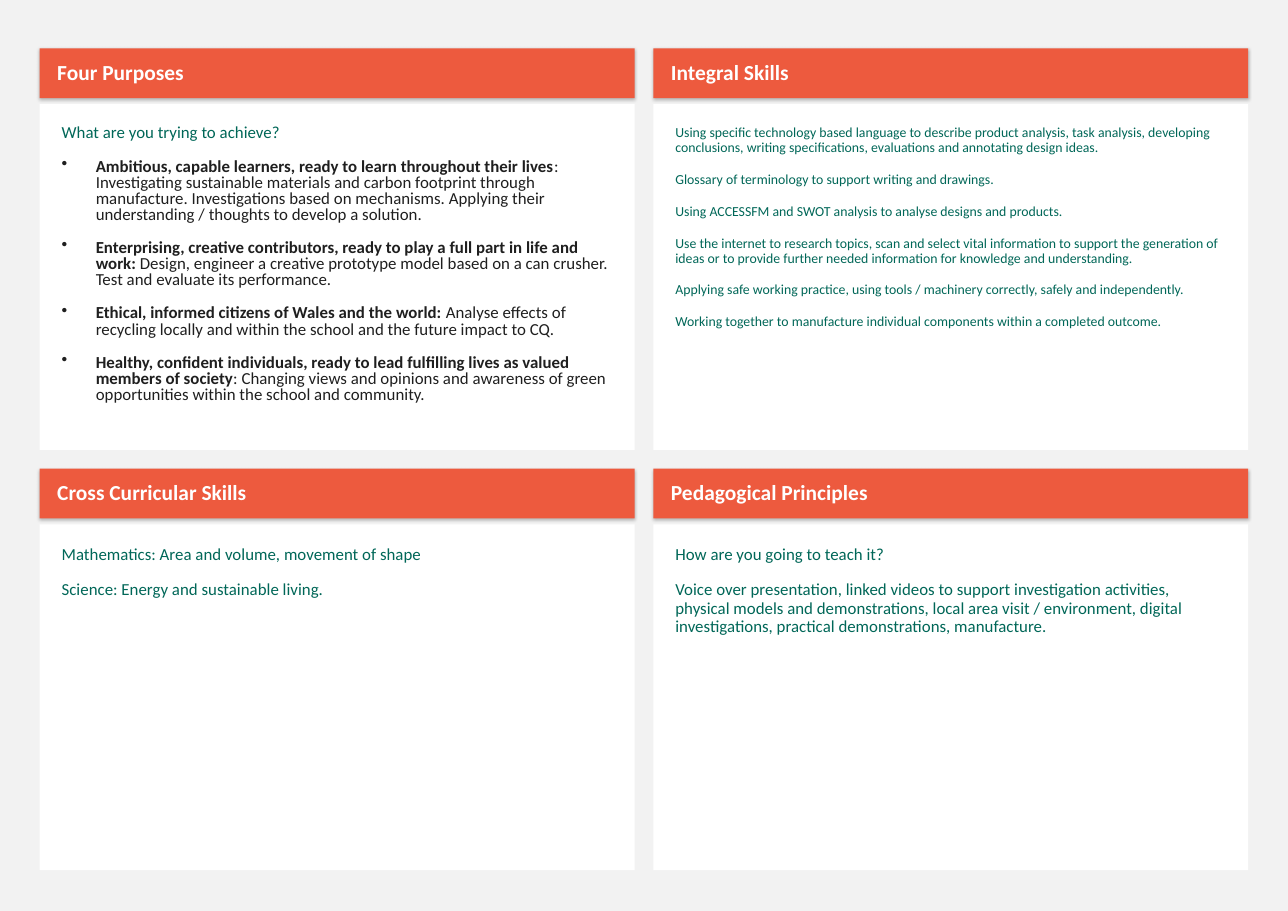
"""Build a slide of four titled panels on curriculum planning."""
from lxml import etree
from pptx import Presentation
from pptx.dml.color import RGBColor
from pptx.enum.shapes import MSO_SHAPE
from pptx.enum.text import MSO_ANCHOR, PP_ALIGN
from pptx.oxml import parse_xml
from pptx.oxml.ns import nsdecls, qn
from pptx.util import Inches, Pt

RECT = MSO_SHAPE.RECTANGLE
TOP, MIDDLE = MSO_ANCHOR.TOP, MSO_ANCHOR.MIDDLE
LEFT = PP_ALIGN.LEFT
COLORS = {"page": "F2F2F2", "head": "ED5A3E", "body": "FFFFFF",
          "title": "FFFFFF", "text": "006758", "dark": "1F1F1F"}
SHADOW = (f'<a:effectLst {nsdecls("a")}><a:outerShdw blurRad="25400" dist="12700" dir="5400000">'
          '<a:srgbClr val="000000"><a:alpha val="25000"/></a:srgbClr></a:outerShdw></a:effectLst>')

PANELS = [
    ("Four Purposes", 11, 0.8, [
        "What are you trying to achieve?",
        ("Ambitious, capable learners, ready to learn throughout their lives",
         ": Investigating sustainable materials and carbon footprint through manufacture. "
         "Investigations based on mechanisms. Applying their understanding / thoughts to "
         "develop a solution."),
        ("Enterprising, creative contributors, ready to play a full part in life and work:",
         " Design, engineer a creative prototype model based on a can crusher. "
         "Test and evaluate its performance."),
        ("Ethical, informed citizens of Wales and the world:",
         " Analyse effects of recycling locally and within the school and the future impact to CQ."),
        ("Healthy, confident individuals, ready to lead fulfilling lives as valued members of society",
         ": Changing views and opinions and awareness of green opportunities within the school "
         "and community."),
    ]),
    ("Integral Skills", 9, 0.9, [
        "Using specific technology based language to describe product analysis, task analysis, "
        "developing conclusions, writing specifications, evaluations and annotating design ideas.",
        "Glossary of terminology to support writing and drawings.",
        "Using ACCESSFM and SWOT analysis to analyse designs and products.",
        "Use the internet to research topics, scan and select vital information to support the "
        "generation of ideas or to provide further needed information for knowledge and understanding.",
        "Applying safe working practice, using tools / machinery correctly, safely and independently.",
        "Working together to manufacture individual components within a completed outcome.",
    ]),
    ("Cross Curricular Skills", 11, 0.9, [
        "Mathematics: Area and volume, movement of shape",
        "Science: Energy and sustainable living.",
    ]),
    ("Pedagogical Principles", 11, 0.9, [
        "How are you going to teach it?",
        "Voice over presentation, linked videos to support investigation activities, physical "
        "models and demonstrations, local area visit / environment, digital investigations, "
        "practical demonstrations, manufacture.",
    ]),
]


def add_box(x, y, high, fill, anchor, pads):
    box = slide.shapes.add_shape(RECT, Inches(x), Inches(y), Inches(5.4), Inches(high))
    box.shadow.inherit = False
    box.fill.solid()
    box.fill.fore_color.rgb = RGBColor.from_string(COLORS[fill])
    box.line.fill.background()
    frame = box.text_frame
    frame.word_wrap = True
    frame.vertical_anchor = anchor
    frame.margin_left, frame.margin_top, frame.margin_right, frame.margin_bottom = map(Inches, pads)
    return box


def style(para, size, color, lead, bold=None):
    para.alignment = LEFT
    para.line_spacing = lead
    para.space_before = Pt(11)
    para.font.name = "Calibri"
    para.font.size = Pt(size)
    para.font.bold = bold
    para.font.color.rgb = RGBColor.from_string(COLORS[color])


deck = Presentation()
deck.slide_width, deck.slide_height = Inches(11.69), Inches(8.27)
slide = deck.slides.add_slide(deck.slide_layouts[6])
slide.background.fill.solid()
slide.background.fill.fore_color.rgb = RGBColor.from_string(COLORS["page"])

for i, (title, size, lead, lines) in enumerate(PANELS):
    row, col = divmod(i, 2)
    x, y = 0.36 + col * 5.57, 0.44 + row * 3.815

    body = add_box(x, y + 0.505, 3.14, "body", TOP, (0.2, 0.2, 0.2, 0.2))
    for j, line in enumerate(lines):
        para = body.text_frame.paragraphs[0] if j == 0 else body.text_frame.add_paragraph()
        if isinstance(line, str):
            para.text = line
            style(para, size, "text", lead)
            continue
        style(para, size, "dark", lead)
        for part, bold in zip(line, (True, False)):
            run = para.add_run()
            run.text = part
            run.font.bold = bold
        props = para._p.get_or_add_pPr()
        props.set("marL", str(Inches(0.31)))
        props.set("indent", str(-Inches(0.31)))
        mark = etree.Element(qn("a:buChar"), char="•")
        props.find(qn("a:defRPr")).addprevious(mark)

    head = add_box(x, y, 0.45, "head", MIDDLE, (0.16, 0.05, 0.1, 0.05))
    props = head._element.spPr
    props.replace(props.find(qn("a:effectLst")), parse_xml(SHADOW))
    para = head.text_frame.paragraphs[0]
    para.text = title
    style(para, 14, "title", 0.9, True)

deck.save("out.pptx")
